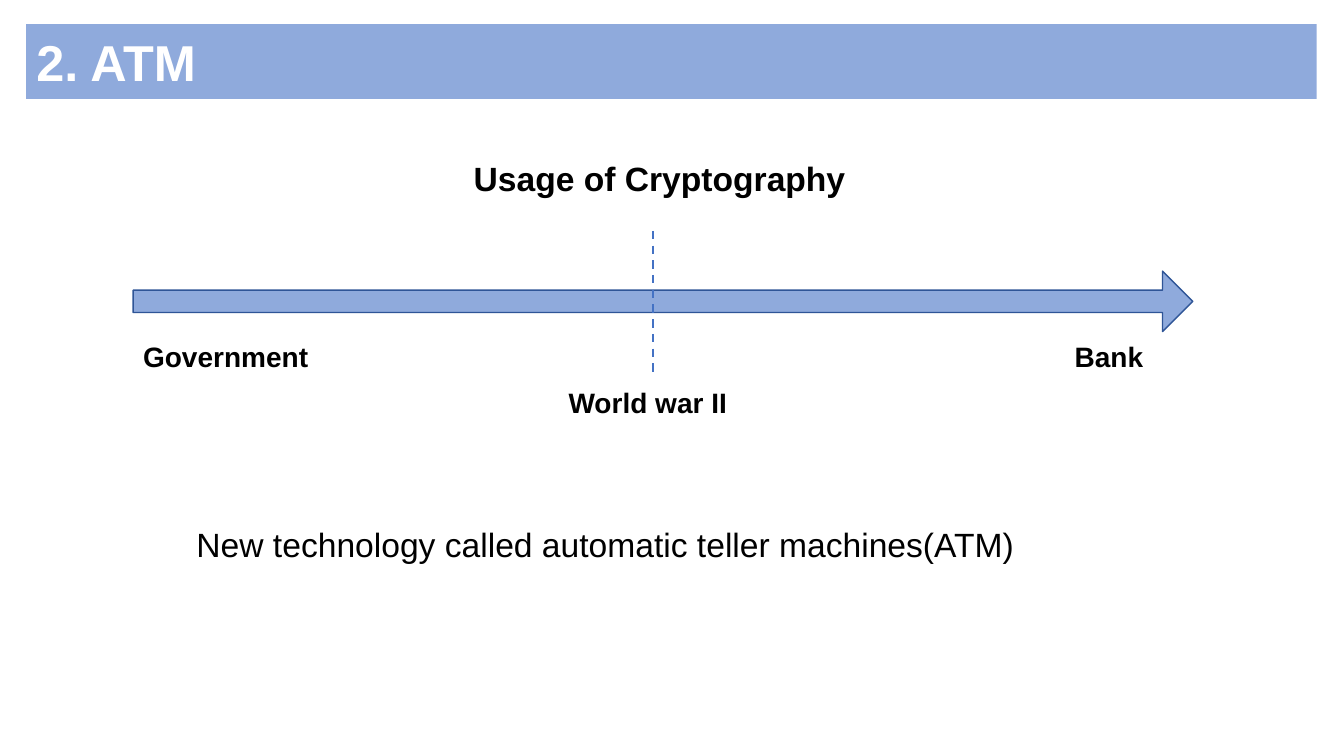
from dataclasses import dataclass

from lxml.etree import SubElement
from pptx import Presentation
from pptx.dml.color import RGBColor as Rgb
from pptx.enum.dml import MSO_LINE as Dash
from pptx.enum.shapes import MSO_CONNECTOR as Conn, MSO_SHAPE as Shape
from pptx.enum.text import MSO_ANCHOR as Anchor, MSO_AUTO_SIZE as Fit, PP_ALIGN as Align
from pptx.oxml.ns import qn
from pptx.slide import Slide
from pptx.text.text import TextFrame
from pptx.util import Inches, Pt

FONT = "Arial"
COLORS = {"band": "8FAADC", "edge": "2F5597", "dash": "4472C4",
          "text": "000000", "title": "FFFFFF"}


@dataclass
class Label:
    text: str
    left: float
    top: float
    width: float
    height: float
    size: int = 20
    bold: bool = True
    wrap: bool = False


LABELS = [
    Label("New technology called automatic teller machines(ATM)",
          1.85, 5.15, 9.26, 2.12, size=24, bold=False, wrap=True),
    Label("Government", 1.32, 3.32, 1.85, 0.44),
    Label("Bank", 10.56, 3.32, 0.89, 0.44),
    Label("Usage of Cryptography", 4.6, 1.52, 3.96, 0.5, size=24),
    Label("World war II", 5.54, 3.78, 1.78, 0.44),
]


def color(name: str) -> Rgb:
    return Rgb.from_string(COLORS[name])


def write(frame: TextFrame, text: str, size: int, bold: bool, tint: str) -> None:
    para = frame.paragraphs[0]
    para.alignment = Align.LEFT
    run = para.add_run()
    run.text = text
    font = run.font
    font.name, font.size, font.bold = FONT, Pt(size), bold
    font.color.rgb = color(tint)


def add_title(slide: Slide, text: str) -> None:
    title = slide.shapes.title
    title.left, title.top = Inches(0.26), Inches(0.24)
    title.width, title.height = Inches(12.8), Inches(0.74)
    title.fill.solid()
    title.fill.fore_color.rgb = color("band")
    frame = title.text_frame
    frame.auto_size = Fit.NONE
    frame.vertical_anchor = Anchor.MIDDLE
    write(frame, text, 36, True, "title")


def add_label(slide: Slide, label: Label) -> None:
    box = slide.shapes.add_textbox(Inches(label.left), Inches(label.top),
                                   Inches(label.width), Inches(label.height))
    frame = box.text_frame
    frame.word_wrap = label.wrap
    write(frame, label.text, label.size, label.bold, "text")


def add_arrow(slide: Slide) -> None:
    arrow = slide.shapes.add_shape(Shape.RIGHT_ARROW, Inches(1.32), Inches(2.69),
                                   Inches(10.51), Inches(0.6))
    arrow.adjustments[0] = 0.37
    arrow.adjustments[1] = 0.5
    arrow.shadow.inherit = False
    arrow.fill.solid()
    arrow.fill.fore_color.rgb = color("band")
    arrow.line.color.rgb = color("edge")
    arrow.line.width = Pt(1)


def add_marker(slide: Slide) -> None:
    mark = slide.shapes.add_connector(Conn.STRAIGHT, Inches(6.48), Inches(2.29),
                                      Inches(6.48), Inches(3.7))
    mark.line.color.rgb = color("dash")
    mark.line.width = Pt(1.5)
    mark.line.dash_style = Dash.DASH
    SubElement(mark._element.spPr, qn("a:effectLst"))


def main() -> None:
    deck = Presentation()
    deck.slide_width, deck.slide_height = Inches(13.33), Inches(7.5)
    slide = deck.slides.add_slide(deck.slide_layouts[5])

    # Title band
    add_title(slide, "2. ATM")

    # Timeline from government to bank, split at the war
    add_arrow(slide)
    add_marker(slide)

    # Captions and closing line
    for label in LABELS:
        add_label(slide, label)

    deck.save("out.pptx")


if __name__ == "__main__":
    main()
